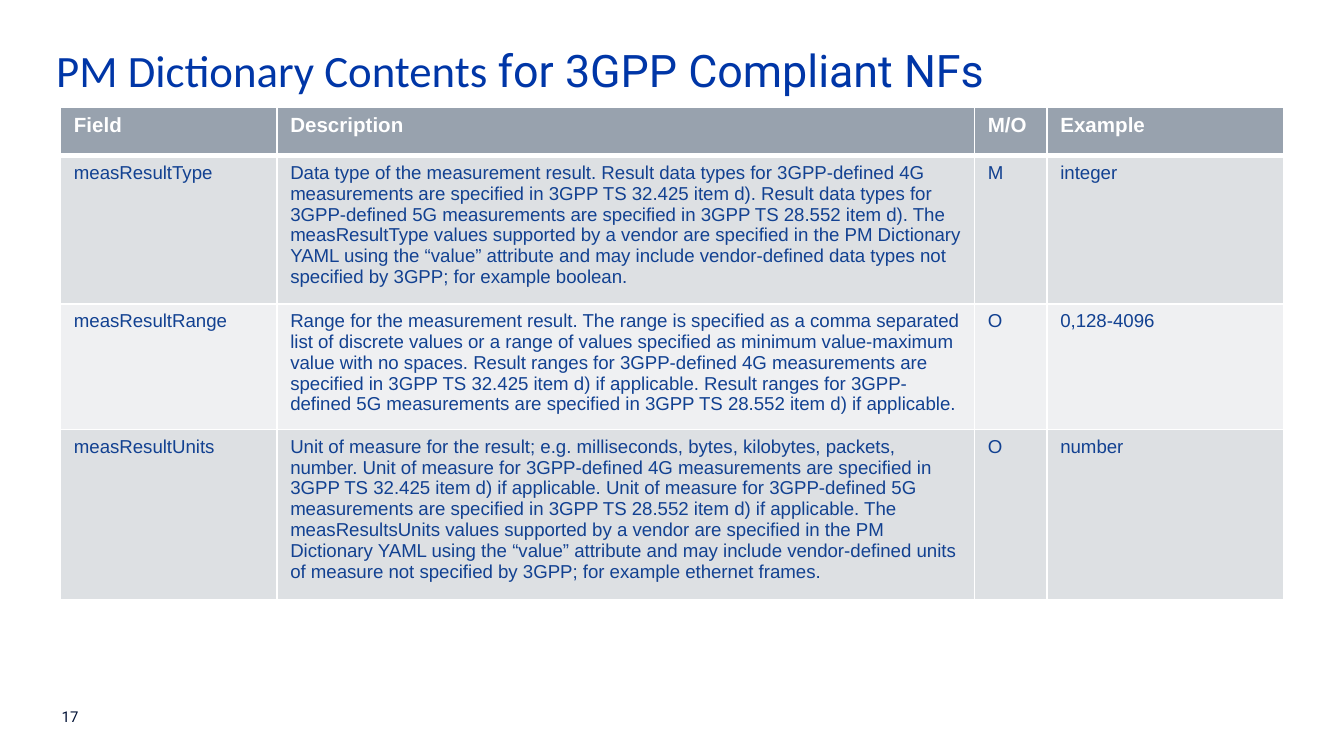
"""Build the PM Dictionary Contents slide with its field table."""
from dataclasses import dataclass

from lxml import etree
from pptx import Presentation
from pptx.dml.color import RGBColor
from pptx.enum.text import MSO_ANCHOR
from pptx.oxml.ns import qn
from pptx.util import Inches, Pt


@dataclass(frozen=True)
class Theme:
    title_color: str = "0036A7"
    number_color: str = "001135"
    header_fill: str = "98A2AE"
    band_fills: tuple = ("EFF0F2", "DDE0E3")
    white: str = "FFFFFF"
    body_color: str = "124191"
    title_size: int = 24
    header_size: int = 11
    body_size: int = 10
    number_size: int = 8
    heading_font: str = "Roboto"
    title_font: str = "Calibri"
    table_font: str = "Arial"


def style_font(font, name, size, color, bold=False):
    font.name, font.size, font.bold = name, Pt(size), bold
    font.color.rgb = RGBColor.from_string(color)


def add_borders(cell, widths):
    properties = cell._tc.get_or_add_tcPr()
    for position, (side, width) in enumerate(widths.items()):
        line = etree.Element(qn(f"a:{side}"), w=str(Pt(width)))
        fill = etree.SubElement(line, qn("a:solidFill"))
        etree.SubElement(fill, qn("a:srgbClr"), val=theme.white)
        properties.insert(position, line)


theme = Theme()
presentation = Presentation()
presentation.slide_width, presentation.slide_height = Inches(10), Inches(10 * 9 / 16)
slide = presentation.slides.add_slide(presentation.slide_layouts[6])

number_box = slide.shapes.add_textbox(Inches(0.46), Inches(5.27), Inches(0.16), Inches(0.13))
number_frame = number_box.text_frame
number_frame.margin_left = number_frame.margin_right = 0
number_frame.margin_top = number_frame.margin_bottom = 0
number_frame.vertical_anchor = MSO_ANCHOR.BOTTOM
number_frame.word_wrap = False
number_frame.text = "17"
style_font(number_frame.paragraphs[0].font, theme.heading_font, theme.number_size, theme.number_color)

title_box = slide.shapes.add_textbox(Inches(0.32), Inches(0.27), Inches(9.01), Inches(0.45))
title_box.text_frame.word_wrap = True
title = title_box.text_frame.paragraphs[0]
title.space_after = Pt(3.4)
for text, font_name in (
    ("PM Dictionary Contents ", theme.title_font),
    ("for 3GPP Compliant NFs", theme.heading_font),
):
    run = title.add_run()
    run.text = text
    style_font(run.font, font_name, theme.title_size, theme.title_color)

rows = [
    ("Field", "Description", "M/O", "Example"),
    (
        "measResultType",
        "Data type of the measurement result. Result data types for 3GPP-defined 4G "
        "measurements are specified in 3GPP TS 32.425 item d). Result data types for "
        "3GPP-defined 5G measurements are specified in 3GPP TS 28.552 item d). The "
        "measResultType values supported by a vendor are specified in the PM Dictionary "
        "YAML using the “value” attribute and may include vendor-defined data types not "
        "specified by 3GPP; for example boolean.",
        "M",
        "integer",
    ),
    (
        "measResultRange",
        "Range for the measurement result. The range is specified as a comma separated "
        "list of discrete values or a range of values specified as minimum value-maximum "
        "value with no spaces. Result ranges for 3GPP-defined 4G measurements are "
        "specified in 3GPP TS 32.425 item d) if applicable. Result ranges for "
        "3GPP-defined 5G measurements are specified in 3GPP TS 28.552 item d) if applicable.",
        "O",
        "0,128-4096",
    ),
    (
        "measResultUnits",
        "Unit of measure for the result; e.g. milliseconds, bytes, kilobytes, packets, "
        "number. Unit of measure for 3GPP-defined 4G measurements are specified in "
        "3GPP TS 32.425 item d) if applicable. Unit of measure for 3GPP-defined 5G "
        "measurements are specified in 3GPP TS 28.552 item d) if applicable. The "
        "measResultsUnits values supported by a vendor are specified in the PM "
        "Dictionary YAML using the “value” attribute and may include vendor-defined units "
        "of measure not specified by 3GPP; for example ethernet frames.",
        "O",
        "number",
    ),
]
column_widths = (1.61, 5.19, 0.54, 1.76)
row_heights = (0.36, 0.41, 0.41, 0.41)
table_frame = slide.shapes.add_table(
    len(rows), len(column_widths), Inches(0.45), Inches(0.8),
    Inches(sum(column_widths)), Inches(sum(row_heights)),
)
table = table_frame.table
for column, width in zip(table.columns, column_widths):
    column.width = Inches(width)
for row, height in zip(table.rows, row_heights):
    row.height = Inches(height)
table_frame.height = Inches(3.66)

for row_index, texts in enumerate(rows):
    header = row_index == 0
    fill_color = theme.header_fill if header else theme.band_fills[row_index % 2]
    size = theme.header_size if header else theme.body_size
    color = theme.white if header else theme.body_color
    borders = {"lnL": 1, "lnR": 1, "lnT": 3 if row_index == 1 else 1, "lnB": 3 if header else 1}
    for column_index, text in enumerate(texts):
        cell = table.cell(row_index, column_index)
        cell.text = text
        style_font(cell.text_frame.paragraphs[0].font, theme.table_font, size, color, header)
        cell.fill.solid()
        cell.fill.fore_color.rgb = RGBColor.from_string(fill_color)
        add_borders(cell, borders)

presentation.save("out.pptx")
